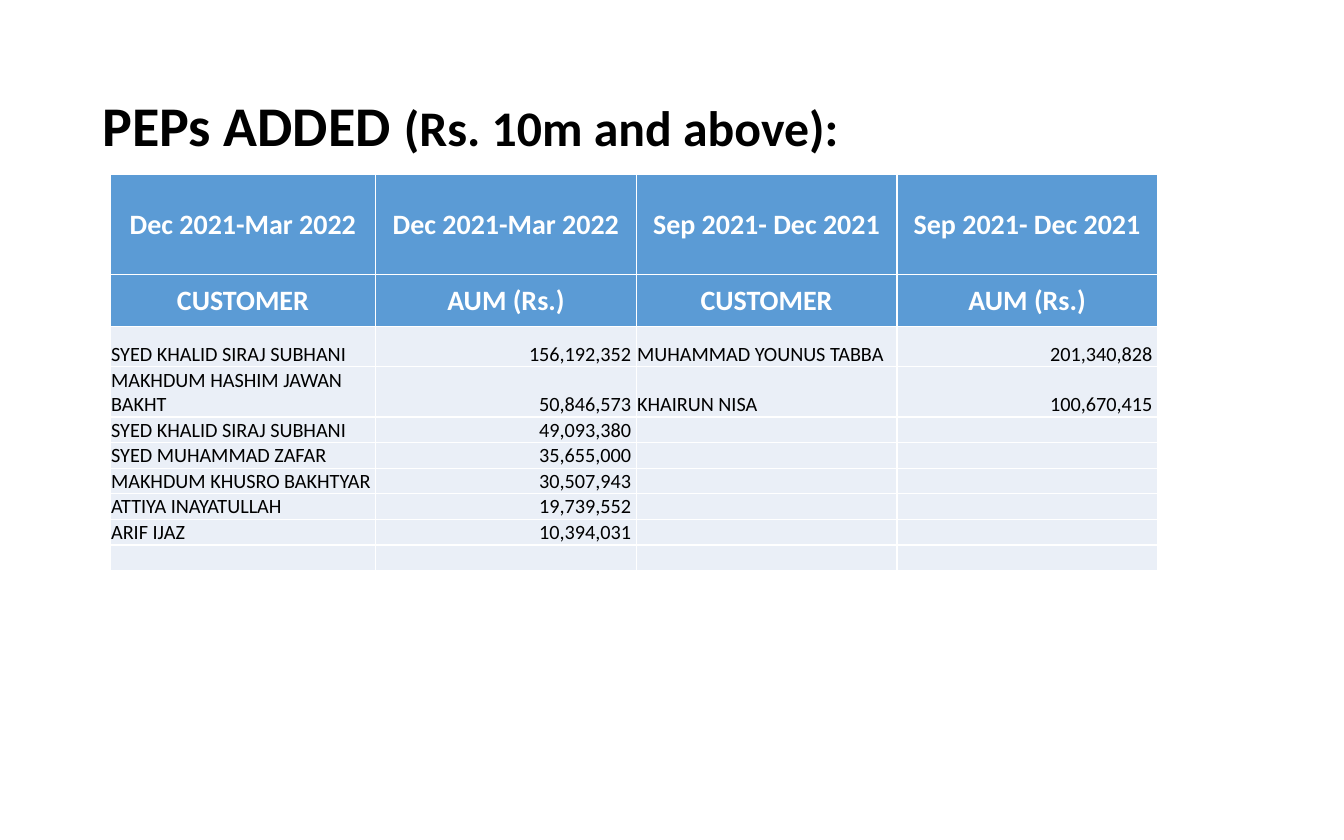
from dataclasses import dataclass

from lxml.etree import SubElement
from pptx import Presentation
from pptx.dml.color import RGBColor
from pptx.enum.text import MSO_ANCHOR, PP_ALIGN
from pptx.oxml.ns import qn
from pptx.util import Cm, Pt


@dataclass(frozen=True)
class Theme:
    font: str = "Calibri"
    black: RGBColor = RGBColor(0x00, 0x00, 0x00)
    white: RGBColor = RGBColor(0xFF, 0xFF, 0xFF)
    header: RGBColor = RGBColor(0x5B, 0x9B, 0xD5)
    body: RGBColor = RGBColor(0xEA, 0xEF, 0xF7)
    title_size: Pt = Pt(36)
    subtitle_size: Pt = Pt(32)
    header_size: Pt = Pt(18)
    body_size: Pt = Pt(13)
    border: Pt = Pt(1)


theme = Theme()


def add_run(p, text, size, color, bold):
    r = p.add_run()
    r.text = text
    for name, value in {"name": theme.font, "size": size, "bold": bold}.items():
        setattr(r.font, name, value)
    r.font.color.rgb = color


def add_borders(cell):
    tc_pr = cell._tc.get_or_add_tcPr()
    for side in ("a:lnL", "a:lnR", "a:lnT", "a:lnB"):
        line = SubElement(tc_pr, qn(side), w=str(theme.border))
        fill = SubElement(line, qn("a:solidFill"))
        SubElement(fill, qn("a:srgbClr"), val=str(theme.white))


prs = Presentation()
prs.slide_width, prs.slide_height = Cm(30.48), Cm(19.05)
s = prs.slides.add_slide(prs.slide_layouts[6])

# Title
tf = s.shapes.add_textbox(Cm(2.08), Cm(1.07), Cm(26.29), Cm(3.68)).text_frame
for name, value in {"word_wrap": True, "vertical_anchor": MSO_ANCHOR.MIDDLE}.items():
    setattr(tf, name, value)
p = tf.paragraphs[0]
p.line_spacing = 0.9
add_run(p, "PEPs ADDED ", theme.title_size, theme.black, True)
add_run(p, "(Rs. 10m and above):", theme.subtitle_size, theme.black, True)

# Customer table
rows = [
    ["Dec 2021-Mar 2022"] * 2 + ["Sep 2021- Dec 2021"] * 2,
    ["CUSTOMER", "AUM (Rs.)"] * 2,
    ["SYED KHALID SIRAJ SUBHANI", "156,192,352", "MUHAMMAD YOUNUS TABBA", "201,340,828"],
    ["MAKHDUM HASHIM JAWAN BAKHT", "50,846,573", "KHAIRUN NISA", "100,670,415"],
    ["SYED KHALID SIRAJ SUBHANI", "49,093,380", "", ""],
    ["SYED MUHAMMAD ZAFAR", "35,655,000", "", ""],
    ["MAKHDUM KHUSRO BAKHTYAR", "30,507,943", "", ""],
    ["ATTIYA INAYATULLAH", "19,739,552", "", ""],
    ["ARIF IJAZ", "10,394,031", "", ""],
    ["", "", "", ""],
]
header_rows = 2
col_widths = [6.02] + [5.91] * 3
row_heights = [2.27, 1.18, 0.91, 1.15] + [0.58] * 6

table = s.shapes.add_table(
    len(rows), len(col_widths), Cm(2.5), Cm(3.95),
    Cm(sum(col_widths)), Cm(sum(row_heights)),
).table
for column, width in zip(table.columns, col_widths):
    column.width = Cm(width)
for row, height in zip(table.rows, row_heights):
    row.height = Cm(height)

for i, values in enumerate(rows):
    is_header = i < header_rows
    for j, text in enumerate(values):
        is_amount = j % 2 == 1 and not is_header
        cell = table.cell(i, j)
        cell_format = {
            "margin_left": Cm(0.02),
            "margin_right": Cm(0.12 if is_amount else 0.02),
            "margin_top": Cm(0.02),
            "margin_bottom": Cm(0),
            "vertical_anchor": MSO_ANCHOR.MIDDLE if is_header else MSO_ANCHOR.BOTTOM,
        }
        for name, value in cell_format.items():
            setattr(cell, name, value)
        add_borders(cell)
        cell.fill.solid()
        cell.fill.fore_color.rgb = theme.header if is_header else theme.body

        p = cell.text_frame.paragraphs[0]
        if is_header:
            p.alignment = PP_ALIGN.CENTER
            add_run(p, text, theme.header_size, theme.white, True)
        elif text:
            p.alignment = PP_ALIGN.RIGHT if is_amount else PP_ALIGN.LEFT
            add_run(p, text, theme.body_size, theme.black, False)
        else:
            # Empty cells need the body size too, or their rows grow taller
            SubElement(p._p, qn("a:endParaRPr"), sz=str(int(theme.body_size.pt * 100)))

prs.save("out.pptx")
